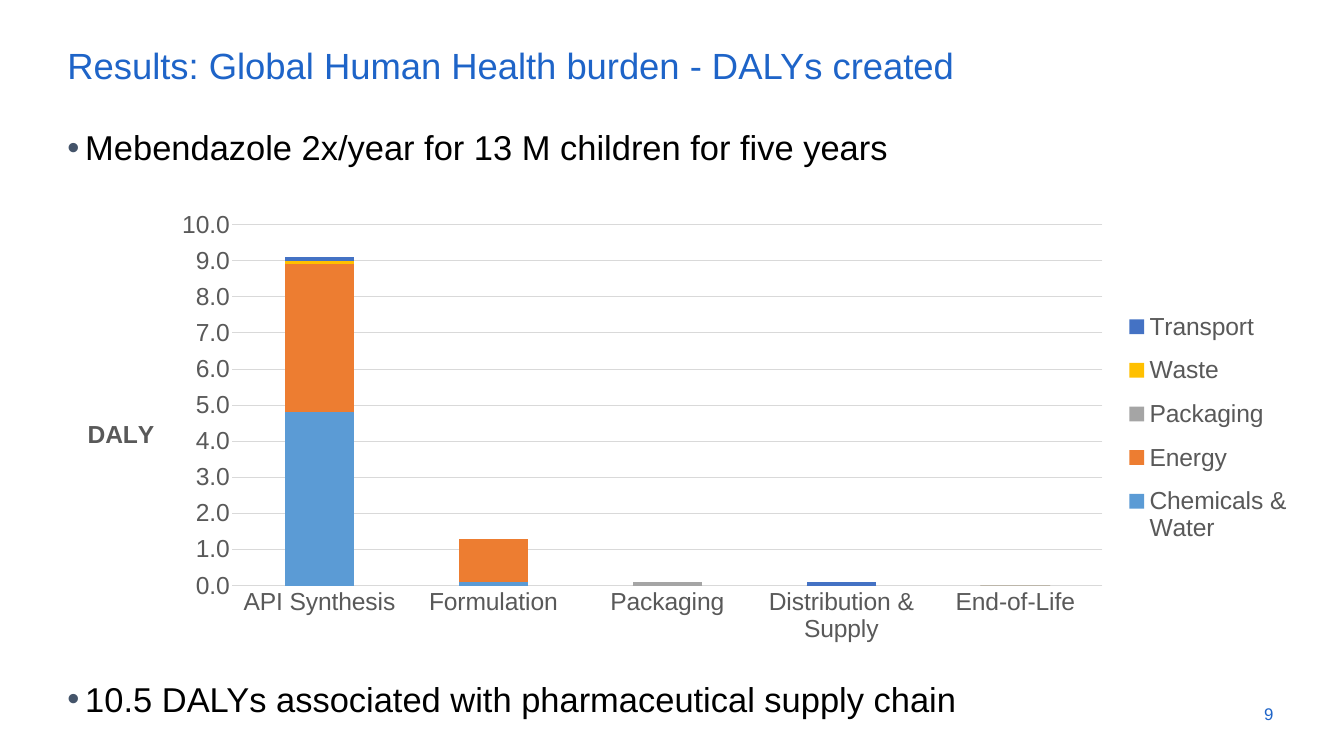
import dataclasses

import lxml.etree
import pptx
import pptx.chart.data
import pptx.dml.color
import pptx.enum.chart
import pptx.enum.text
import pptx.oxml.ns
import pptx.util

Align = pptx.enum.text.PP_ALIGN
Anchor = pptx.enum.text.MSO_ANCHOR


@dataclasses.dataclass(frozen=True)
class Theme:
    """Colours, font and type sizes of the slide."""
    font: str = "Arial"
    accent: str = "1E64C8"
    body: str = "000000"
    bullet: str = "44546A"
    label: str = "595959"
    grid: str = "D9D9D9"
    title_size: float = 37
    body_size: float = 35
    chart_size: float = 25
    number_size: float = 17.1


STAGES = ["API Synthesis", "Formulation", "Packaging", "Distribution & Supply", "End-of-Life"]
SOURCES = [
    ("Chemicals & Water", "5B9BD5", (4.8, 0.1, 0, 0, 0)),
    ("Energy", "ED7D31", (4.1, 1.2, 0, 0, 0)),
    ("Packaging", "A5A5A5", (0, 0, 0.1, 0, 0)),
    ("Waste", "FFC000", (0.1, 0, 0, 0, 0)),
    ("Transport", "4472C4", (0.1, 0, 0, 0.1, 0)),
]


def rgb(colour):
    """Turn a hex string into a colour."""
    return pptx.dml.color.RGBColor.from_string(colour)


def set_font(font, name, size, colour, bold=False):
    """Apply one type style to a font."""
    font.name, font.size, font.bold = name, pptx.util.Pt(size), bold
    font.color.rgb = rgb(colour)


def write(frame, text, *, font, size, colour, bold=False, align=Align.LEFT,
          anchor=Anchor.TOP, spacing=1.0, before=0, after=0):
    """Write one formatted paragraph into a text frame and return it."""
    frame.word_wrap = True
    frame.auto_size = pptx.enum.text.MSO_AUTO_SIZE.NONE
    frame.vertical_anchor = anchor
    paragraph = frame.paragraphs[0]
    paragraph.alignment, paragraph.line_spacing = align, spacing
    paragraph.space_before, paragraph.space_after = pptx.util.Pt(before), pptx.util.Pt(after)
    run = paragraph.add_run()
    run.text = text
    set_font(run.font, font, size, colour, bold)
    return paragraph


def add_xml(parent, tag, **attributes):
    """Append a child element with the given attributes."""
    child = lxml.etree.SubElement(parent, pptx.oxml.ns.qn(tag))
    for name, value in attributes.items():
        child.set(name, str(value))
    return child


def place_in_chart(element, position, **layout):
    """Fix a chart part by fractions of the chart area."""
    for old in element.findall(pptx.oxml.ns.qn("c:layout")):
        element.remove(old)
    holder = add_xml(element, "c:layout")
    manual = add_xml(holder, "c:manualLayout")
    for name, value in layout.items():
        add_xml(manual, f"c:{name}", val=value)
    element.insert(position, holder)


class SlideBuilder:
    """Holds the theme and the slide being built."""

    def __init__(self, slide, theme):
        """Keep the slide and its theme."""
        self.slide, self.theme = slide, theme

    def place(self, shape, left, top, width, height):
        """Move a shape to a place in centimetres."""
        shape.left, shape.top = pptx.util.Cm(left), pptx.util.Cm(top)
        shape.width, shape.height = pptx.util.Cm(width), pptx.util.Cm(height)

    def title(self, text, *box):
        """Fill the title placeholder."""
        heading = self.slide.shapes.title
        self.place(heading, *box)
        write(heading.text_frame, text, font=self.theme.font, size=self.theme.title_size,
              colour=self.theme.accent, anchor=Anchor.BOTTOM, spacing=0.9)

    def bullet(self, index, text, *box):
        """Fill a body placeholder with one bulleted line."""
        body = self.slide.placeholders[index]
        self.place(body, *box)
        paragraph = write(body.text_frame, text, font=self.theme.font, size=self.theme.body_size,
                          colour=self.theme.body, spacing=1.2, before=20, after=6)
        properties = paragraph._p.get_or_add_pPr()
        indent = pptx.util.Cm(0.64)
        properties.set("marL", str(indent))
        properties.set("indent", str(-indent))
        add_xml(add_xml(properties, "a:buClr"), "a:srgbClr", val=self.theme.bullet)
        add_xml(properties, "a:buChar", char="•")

    def page_number(self, text, *box):
        """Add the slide number."""
        number = self.slide.shapes.add_textbox(*map(pptx.util.Cm, box))
        write(number.text_frame, text, font=self.theme.font, size=self.theme.number_size,
              colour=self.theme.accent, align=Align.RIGHT, anchor=Anchor.MIDDLE)

    def stacked_columns(self, categories, sources, axis_name, *box):
        """Add the stacked column chart."""
        theme = self.theme
        data = pptx.chart.data.CategoryChartData(number_format="0.0")
        data.categories = categories
        for name, _, values in sources:
            data.add_series(name, values)
        chart = self.slide.shapes.add_chart(
            pptx.enum.chart.XL_CHART_TYPE.COLUMN_STACKED, *map(pptx.util.Cm, box), data).chart
        chart.has_title = False
        set_font(chart.font, theme.font, theme.chart_size, theme.label)
        plot = chart.plots[0]
        plot.gap_width, plot.overlap, plot.vary_by_categories = 150, 100, False
        for series, (_, colour, _) in zip(plot.series, sources):
            series.format.fill.solid()
            series.format.fill.fore_color.rgb = rgb(colour)
        place_in_chart(plot._element.getparent(), 0, layoutTarget="inner", xMode="edge",
                       yMode="edge", x=0.13, y=0.05, w=0.7, h=0.8)
        self.axes(chart, axis_name)
        chart.has_legend = True
        chart.legend.position = pptx.enum.chart.XL_LEGEND_POSITION.RIGHT
        chart.legend.include_in_layout = False
        set_font(chart.legend.font, theme.font, theme.chart_size, theme.label)
        place_in_chart(chart.legend._element, 1, xMode="edge", yMode="edge",
                       x=0.84, y=0.21, w=0.15, h=0.58)

    def axes(self, chart, axis_name):
        """Format both axes and the gridlines."""
        theme = self.theme
        for axis in (chart.category_axis, chart.value_axis):
            axis.major_tick_mark = axis.minor_tick_mark = pptx.enum.chart.XL_TICK_MARK.NONE
            set_font(axis.tick_labels.font, theme.font, theme.chart_size, theme.label)
        values = chart.value_axis
        values.minimum_scale, values.maximum_scale, values.major_unit = 0, 10, 1
        values.tick_labels.number_format = "0.0"
        values.tick_labels.number_format_is_linked = False
        values.has_major_gridlines = True
        values.format.line.fill.background()
        for line in (chart.category_axis.format.line, values.major_gridlines.format.line):
            line.color.rgb, line.width = rgb(theme.grid), pptx.util.Pt(0.75)
        frame = values.axis_title.text_frame
        write(frame, axis_name, font=theme.font, size=theme.chart_size,
              colour=theme.label, bold=True)
        frame._txBody.bodyPr.set("rot", "0")
        place_in_chart(values.axis_title._element, 1, xMode="edge", yMode="edge", x=0.01, y=0.47)


def main():
    """Build and save the slide."""
    deck = pptx.Presentation()
    deck.slide_width, deck.slide_height = pptx.util.Cm(48.16), pptx.util.Cm(27.1)
    builder = SlideBuilder(deck.slides.add_slide(deck.slide_layouts[3]), Theme())
    builder.stacked_columns(STAGES, SOURCES, "DALY", 2.54, 7.24, 44.53, 16.18)
    builder.page_number("9", 43.31, 24.87, 2.57, 1.45)
    builder.title("Results: Global Human Health burden - DALYs created", 2.16, 1.55, 38.53, 1.7)
    builder.bullet(1, "Mebendazole 2x/year for 13 M children for five years",
                   2.16, 4.11, 45.36, 1.98)
    builder.bullet(2, "10.5 DALYs associated with pharmaceutical supply chain",
                   2.16, 23.88, 43.82, 1.98)
    deck.save("out.pptx")


if __name__ == "__main__":
    main()
